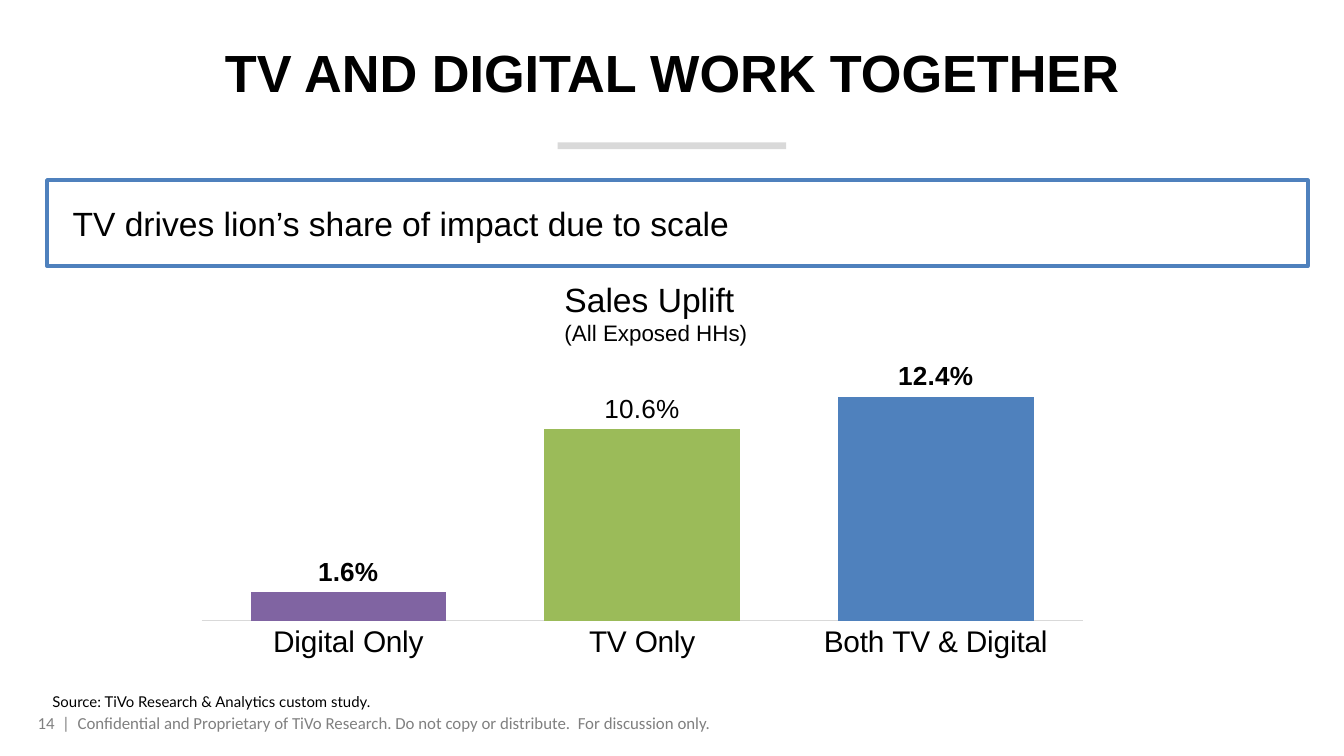
from lxml.etree import SubElement
from pptx import Presentation
from pptx.chart.data import CategoryChartData
from pptx.dml.color import RGBColor
from pptx.enum.chart import XL_CHART_TYPE, XL_LABEL_POSITION, XL_TICK_LABEL_POSITION, XL_TICK_MARK
from pptx.enum.shapes import MSO_SHAPE
from pptx.enum.text import MSO_ANCHOR, PP_ALIGN
from pptx.oxml.ns import qn
from pptx.util import Inches, Pt

# Widescreen, 16:9
WIDTH = Inches(10)
HEIGHT = WIDTH * 9 // 16
BLACK = RGBColor(0x00, 0x00, 0x00)
WHITE = RGBColor(0xFF, 0xFF, 0xFF)
GRAY = RGBColor(0x80, 0x80, 0x80)
RULE_GRAY = RGBColor(0xD9, 0xD9, 0xD9)
BLUE = RGBColor(0x4F, 0x81, 0xBD)
PURPLE = RGBColor(0x80, 0x64, 0xA2)
GREEN = RGBColor(0x9B, 0xBB, 0x59)

# Regions in inches: left, top, width, height
TITLE = (0.5, 0.23, 9, 0.6)
RULE = (4.15, 1.06, 1.7, 0.05)
MESSAGE = (0.35, 1.34, 9.38, 0.64)
HEADING = (4.18, 2.05, 1.41, 0.55)
CHART = (1.44, 2.68, 6.67, 2.57)
SOURCE = (0.35, 5.13, 2.56, 0.17)
FOOTER = (0.26, 5.28, 7.51, 0.19)

UPLIFT = {
    "Digital Only": (0.016, PURPLE),
    "TV Only": (0.106, GREEN),
    "Both TV & Digital": (0.124, BLUE),
}
PLOT = {"x": 0.009, "y": 0.022, "w": 0.983, "h": 0.733}


def format_font(font, color=BLACK, **values):
    for name, value in values.items():
        setattr(font, name, value)
    font.color.rgb = color


def format_frame(frame, inset, wrap=True, anchor=MSO_ANCHOR.MIDDLE):
    values = {
        "margin_left": Inches(inset), "margin_right": Inches(inset),
        "margin_top": Inches(0.02), "margin_bottom": Inches(0.02),
        "word_wrap": wrap, "vertical_anchor": anchor,
    }
    for name, value in values.items():
        setattr(frame, name, value)


def add_bar(slide, box, fill):
    bar = slide.shapes.add_shape(MSO_SHAPE.RECTANGLE, *map(Inches, box))
    bar.shadow.inherit = False
    bar.fill.solid()
    bar.fill.fore_color.rgb = fill
    bar.line.fill.background()
    return bar


def add_note(slide, box, lines, inset=0.02, wrap=True, anchor=MSO_ANCHOR.MIDDLE):
    """Text box whose lines are (text, colour, font values)."""
    frame = slide.shapes.add_textbox(*map(Inches, box)).text_frame
    format_frame(frame, inset, wrap, anchor)
    paragraph = frame.paragraphs[0]
    for index, (text, color, font) in enumerate(lines):
        if index:
            paragraph.add_line_break()
        run = paragraph.add_run()
        run.text = text
        format_font(run.font, color, **font)


def add_title(slide, box):
    title = slide.shapes.title
    for name, value in zip(("left", "top", "width", "height"), box):
        setattr(title, name, Inches(value))
    title.text_frame.text = "TV AND DIGITAL WORK TOGETHER"
    title.text_frame.vertical_anchor = MSO_ANCHOR.MIDDLE
    paragraph = title.text_frame.paragraphs[0]
    paragraph.alignment = PP_ALIGN.CENTER
    format_font(paragraph.runs[0].font, name="Arial", size=Pt(28), bold=True)


def add_message(slide, box):
    message = add_bar(slide, box, WHITE)
    message.line.color.rgb = BLUE
    message.line.width = Pt(2)
    format_frame(message.text_frame, 0.19)
    paragraph = message.text_frame.paragraphs[0]
    paragraph.alignment = PP_ALIGN.LEFT
    run = paragraph.add_run()
    run.text = "TV drives lion’s share of impact due to scale"
    format_font(run.font, name="Arial", size=Pt(18))


def place_plot(chart):
    """Fix the inner plot area as shares of the chart."""
    plot_area = chart.plots[0]._element.getparent()
    layout = plot_area.find(qn("c:layout"))
    if layout is None:
        layout = SubElement(plot_area, qn("c:layout"))
        plot_area.insert(0, layout)
    manual = SubElement(layout, qn("c:manualLayout"))
    settings = {"layoutTarget": "inner", "xMode": "edge", "yMode": "edge", **PLOT}
    for tag, value in settings.items():
        SubElement(manual, qn(f"c:{tag}")).set("val", str(value))


def add_uplift_chart(slide, box):
    data = CategoryChartData(number_format="0.0%")
    data.categories = list(UPLIFT)
    data.add_series("Series 1", [value for value, _ in UPLIFT.values()])
    chart = slide.shapes.add_chart(
        XL_CHART_TYPE.COLUMN_CLUSTERED, *map(Inches, box), data).chart
    chart.has_legend = chart.has_title = False
    format_font(chart.font, name="Calibri", size=Pt(10))
    place_plot(chart)

    # Axes
    categories, values = chart.category_axis, chart.value_axis
    categories.major_tick_mark = categories.minor_tick_mark = XL_TICK_MARK.NONE
    categories.tick_label_position = XL_TICK_LABEL_POSITION.NEXT_TO_AXIS
    format_font(categories.tick_labels.font, name="Arial", size=Pt(16))
    categories.tick_labels.offset = 0
    categories.format.line.color.rgb = RULE_GRAY
    categories.format.line.width = Pt(0.75)
    values.minimum_scale, values.maximum_scale = 0, 0.14
    values.has_major_gridlines = values.visible = False
    values.major_tick_mark = values.minor_tick_mark = XL_TICK_MARK.NONE
    values.tick_labels.number_format = "0.0%"
    values.tick_labels.number_format_is_linked = False

    # Columns
    plot = chart.plots[0]
    plot.gap_width = 50
    plot.vary_by_categories = False
    series = plot.series[0]
    series.invert_if_negative = False
    series.format.fill.solid()
    series.format.fill.fore_color.rgb = BLUE
    for index, (_, color) in enumerate(UPLIFT.values()):
        fill = series.points[index].format.fill
        fill.solid()
        fill.fore_color.rgb = color

    # Value labels, with the TV one in regular weight
    labels = series.data_labels
    label_values = {
        "show_value": True, "number_format": "0.0%",
        "number_format_is_linked": False, "position": XL_LABEL_POSITION.OUTSIDE_END,
    }
    for name, value in label_values.items():
        setattr(labels, name, value)
    format_font(labels.font, name="Arial", size=Pt(14), bold=True)
    tv_label = series.points[1].data_label
    tv_run = tv_label.text_frame.paragraphs[0].add_run()
    tv_run.text = "10.6%"
    format_font(tv_run.font, name="Arial", size=Pt(14), bold=False)
    tv_label.position = XL_LABEL_POSITION.OUTSIDE_END


def main():
    deck = Presentation()
    deck.slide_width, deck.slide_height = WIDTH, HEIGHT
    slide = deck.slides.add_slide(deck.slide_layouts[5])

    add_note(slide, FOOTER, [(
        "14  |  Confidential and Proprietary of TiVo Research. "
        "Do not copy or distribute.  For discussion only.",
        GRAY, {"name": "Calibri", "size": Pt(9)})])
    add_bar(slide, RULE, RULE_GRAY)
    add_title(slide, TITLE)
    add_note(slide, SOURCE, [(
        "Source: TiVo Research & Analytics custom study.",
        BLACK, {"name": "Lato", "size": Pt(8)})],
        inset=0.04, wrap=False, anchor=MSO_ANCHOR.TOP)
    add_message(slide, MESSAGE)
    add_uplift_chart(slide, CHART)
    add_note(slide, HEADING, [
        ("Sales Uplift", BLACK, {"name": "Arial", "size": Pt(18)}),
        ("(All Exposed HHs)", BLACK, {"name": "Arial", "size": Pt(12)})],
        wrap=False)
    deck.save("out.pptx")


if __name__ == "__main__":
    main()
